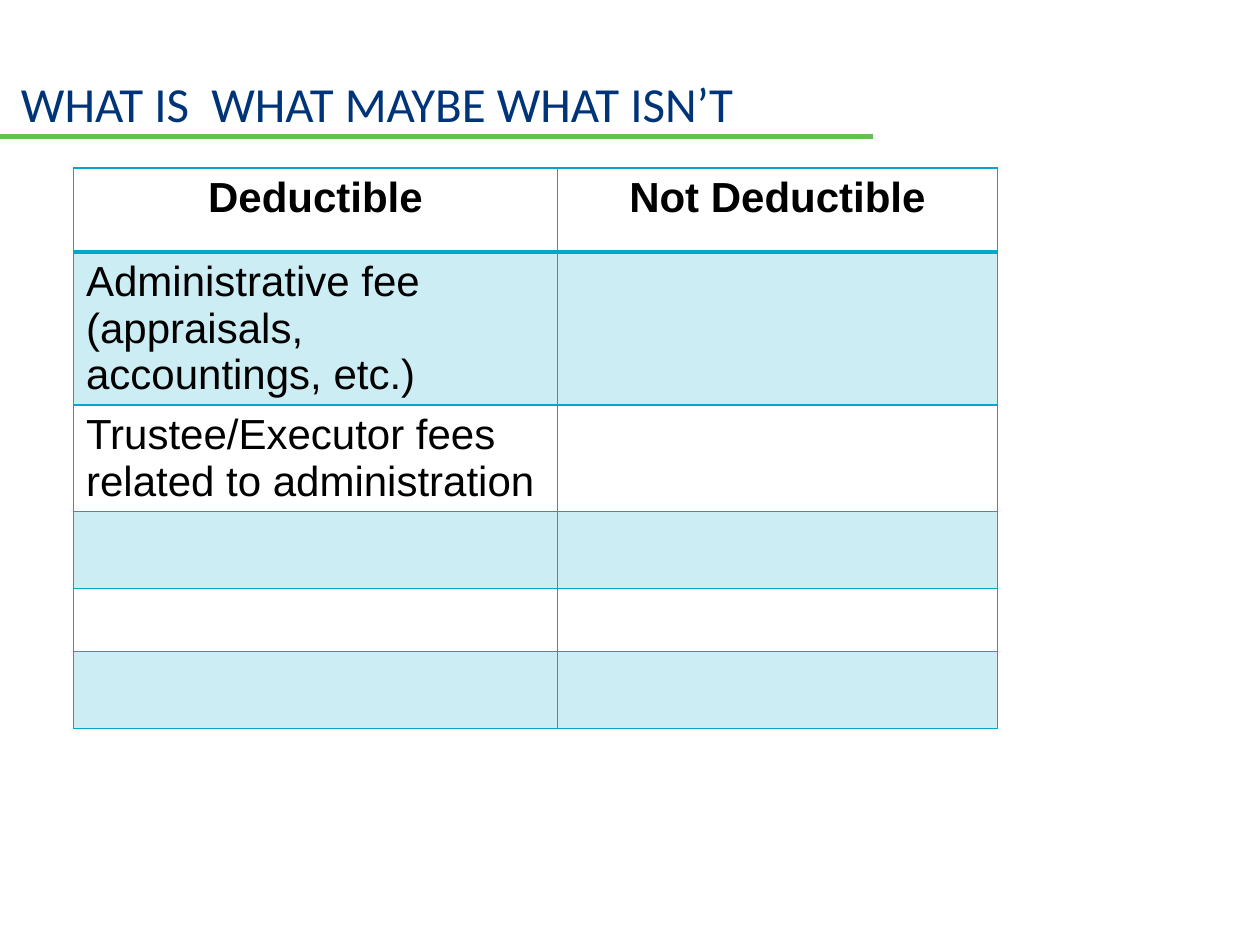
from dataclasses import dataclass

import pptx
import pptx.dml.color
import pptx.enum.shapes
import pptx.enum.text
import pptx.oxml
import pptx.oxml.ns
import pptx.util
from lxml import etree

Pt = pptx.util.Pt
RGB = pptx.dml.color.RGBColor.from_string
qn = pptx.oxml.ns.qn
PP_ALIGN = pptx.enum.text.PP_ALIGN


@dataclass(frozen=True)
class Theme:
    navy: str = "003478"
    green: str = "61C250"
    teal: str = "00A8CB"
    black: str = "000000"
    band_opacity: int = 20
    title_font: str = "Calibri"
    table_font: str = "Arial"
    title_size: int = 28
    table_size: int = 24


THEME = Theme()
COLUMN_WIDTHS = [276.5, 251.5]
ROW_HEIGHTS = [48, 70, 44, 44, 36, 44]
ROWS = [
    ("Deductible", "Not Deductible"),
    ("Administrative fee (appraisals, accountings, etc.)", ""),
    ("Trustee/Executor fees related to administration", ""),
    ("", ""),
    ("", ""),
    ("", ""),
]


def style_font(font, name, size, color, bold=False):
    font.name = name
    font.size = Pt(size)
    font.bold = bold
    font.color.rgb = RGB(color)


def add_title(page, text):
    title = page.shapes.title
    title.left, title.top, title.width, title.height = Pt(12), Pt(19), Pt(490), Pt(56.5)
    frame = title.text_frame
    frame.text = text
    frame.word_wrap = True
    frame.auto_size = pptx.enum.text.MSO_AUTO_SIZE.NONE
    frame.vertical_anchor = pptx.enum.text.MSO_ANCHOR.BOTTOM
    frame.margin_left = frame.margin_top = frame.margin_right = frame.margin_bottom = 0
    para = frame.paragraphs[0]
    para.alignment = PP_ALIGN.LEFT
    para.line_spacing = Pt(THEME.title_size)
    style_font(para.font, THEME.title_font, THEME.title_size, THEME.navy)


def add_rule(page, width, y):
    rule = page.shapes.add_connector(
        pptx.enum.shapes.MSO_CONNECTOR.STRAIGHT, 0, Pt(y), Pt(width), Pt(y))
    rule.line.color.rgb = RGB(THEME.green)
    rule.line.width = Pt(3)
    properties = rule.element.find(qn("p:spPr"))
    etree.SubElement(properties, qn("a:effectLst"))


def set_borders(cell, top, bottom):
    properties = cell._tc.get_or_add_tcPr()
    for side, width in (("L", 1), ("R", 1), ("T", top), ("B", bottom)):
        line = etree.SubElement(properties, qn(f"a:ln{side}"), w=str(Pt(width)))
        fill = etree.SubElement(line, qn("a:solidFill"))
        etree.SubElement(fill, qn("a:srgbClr"), val=THEME.teal)


def fill_band(cell):
    """Tint the cell with the translucent table colour."""
    cell.fill.solid()
    cell.fill.fore_color.rgb = RGB(THEME.teal)
    color = cell._tc.tcPr.find(qn("a:solidFill")).find(qn("a:srgbClr"))
    etree.SubElement(color, qn("a:alpha"), val=str(THEME.band_opacity * 1000))


def format_cell(cell, row, text):
    is_header = row == 0
    cell.text = text
    para = cell.text_frame.paragraphs[0]
    para.alignment = PP_ALIGN.CENTER if is_header else PP_ALIGN.LEFT
    style_font(para.font, THEME.table_font, THEME.table_size, THEME.black, is_header)
    set_borders(cell, top=2 if row == 1 else 1, bottom=2 if is_header else 1)
    if row % 2:
        fill_band(cell)
    else:
        cell.fill.background()


def add_deduction_table(page):
    table = page.shapes.add_table(
        len(ROWS), len(COLUMN_WIDTHS), Pt(42), Pt(96),
        Pt(sum(COLUMN_WIDTHS)), Pt(sum(ROW_HEIGHTS))).table
    for column, width in zip(table.columns, COLUMN_WIDTHS):
        column.width = Pt(width)
    for row, (height, texts) in enumerate(zip(ROW_HEIGHTS, ROWS)):
        table.rows[row].height = Pt(height)
        for column, text in enumerate(texts):
            format_cell(table.cell(row, column), row, text)


def main():
    deck = pptx.Presentation()
    deck.slide_width, deck.slide_height = Pt(720), Pt(540)
    page = deck.slides.add_slide(deck.slide_layouts.get_by_name("Title Only"))
    add_rule(page, width=499, y=78)
    add_deduction_table(page)
    add_title(page, "WHAT IS  WHAT MAYBE WHAT ISN’T")
    deck.save("out.pptx")


if __name__ == "__main__":
    main()
